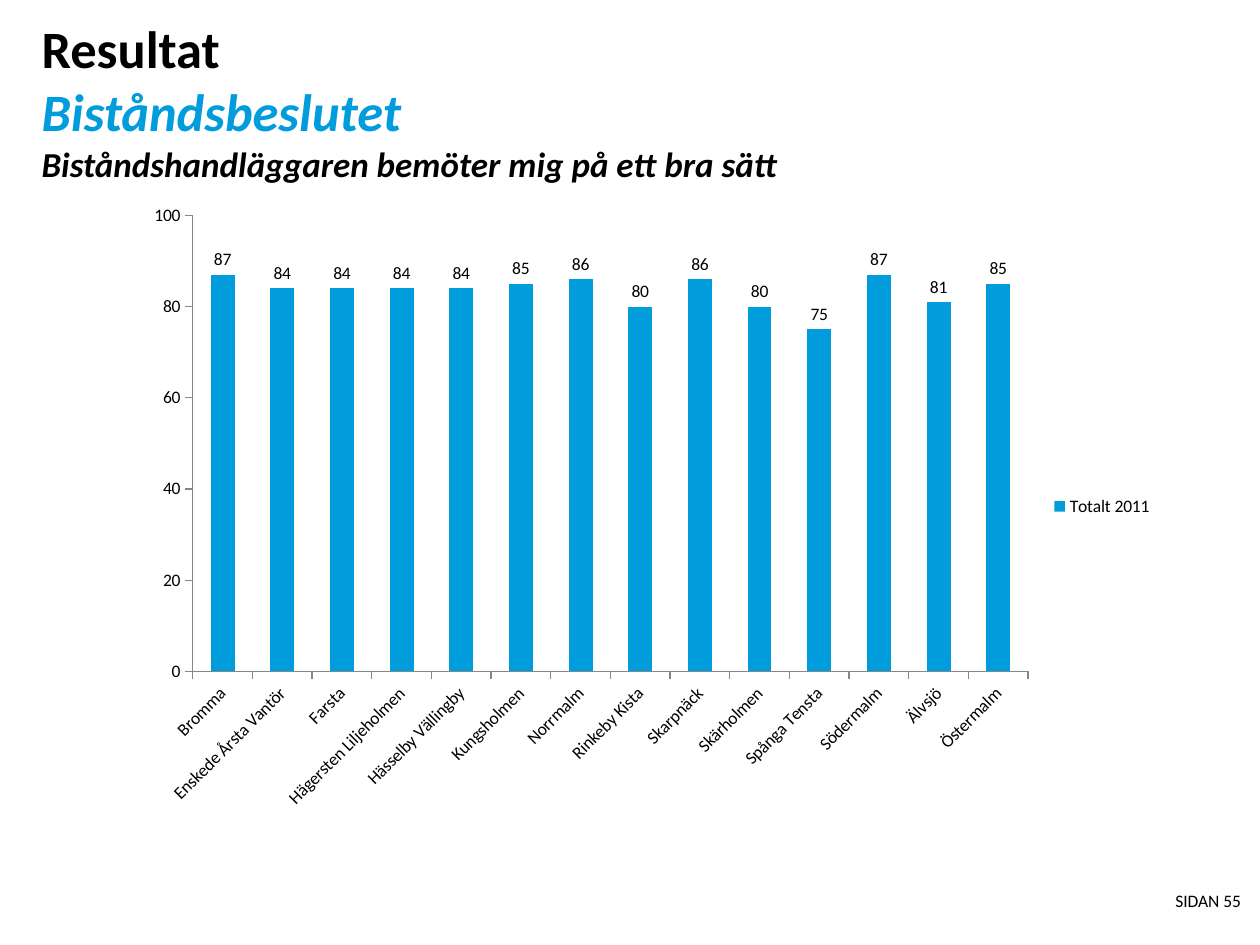
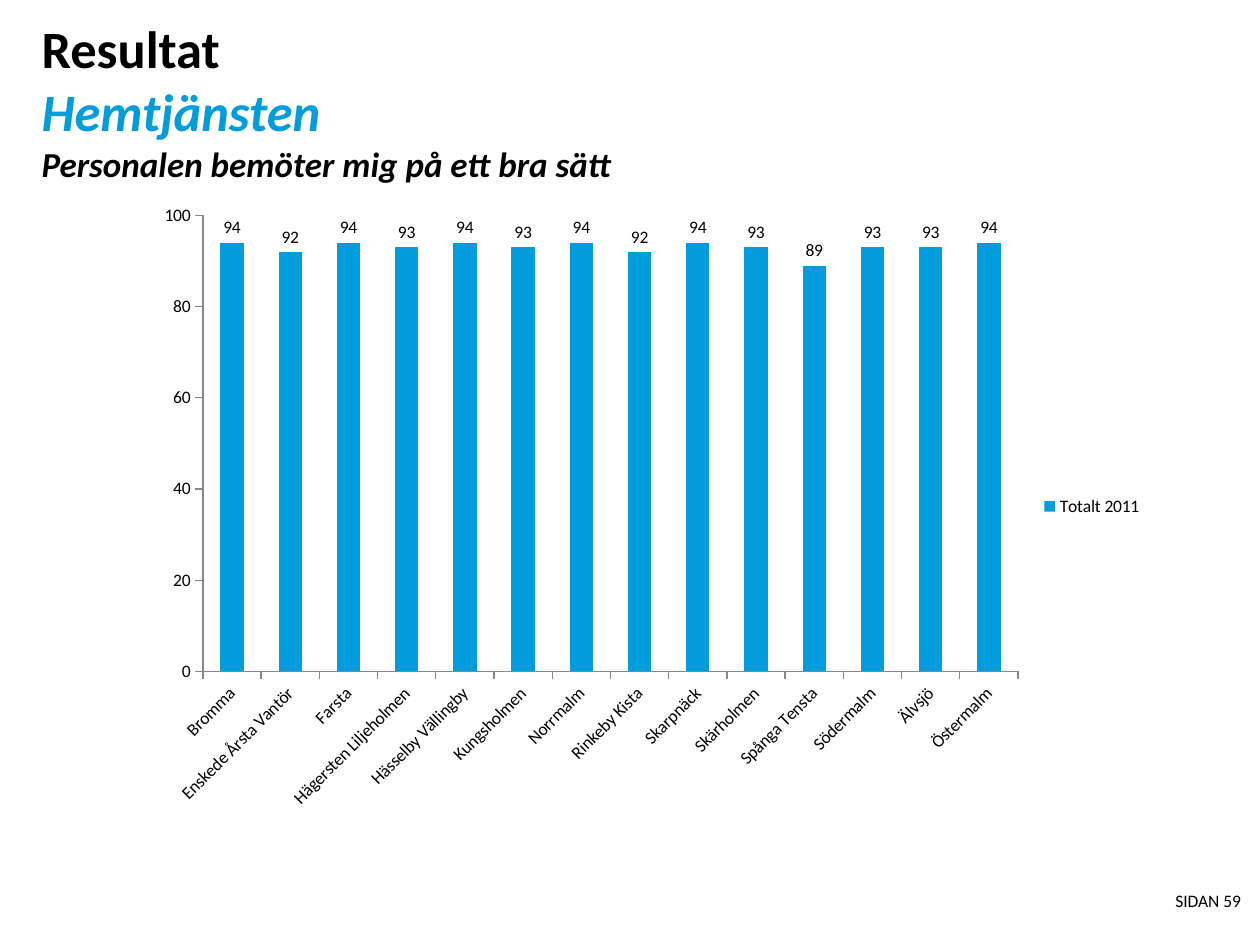
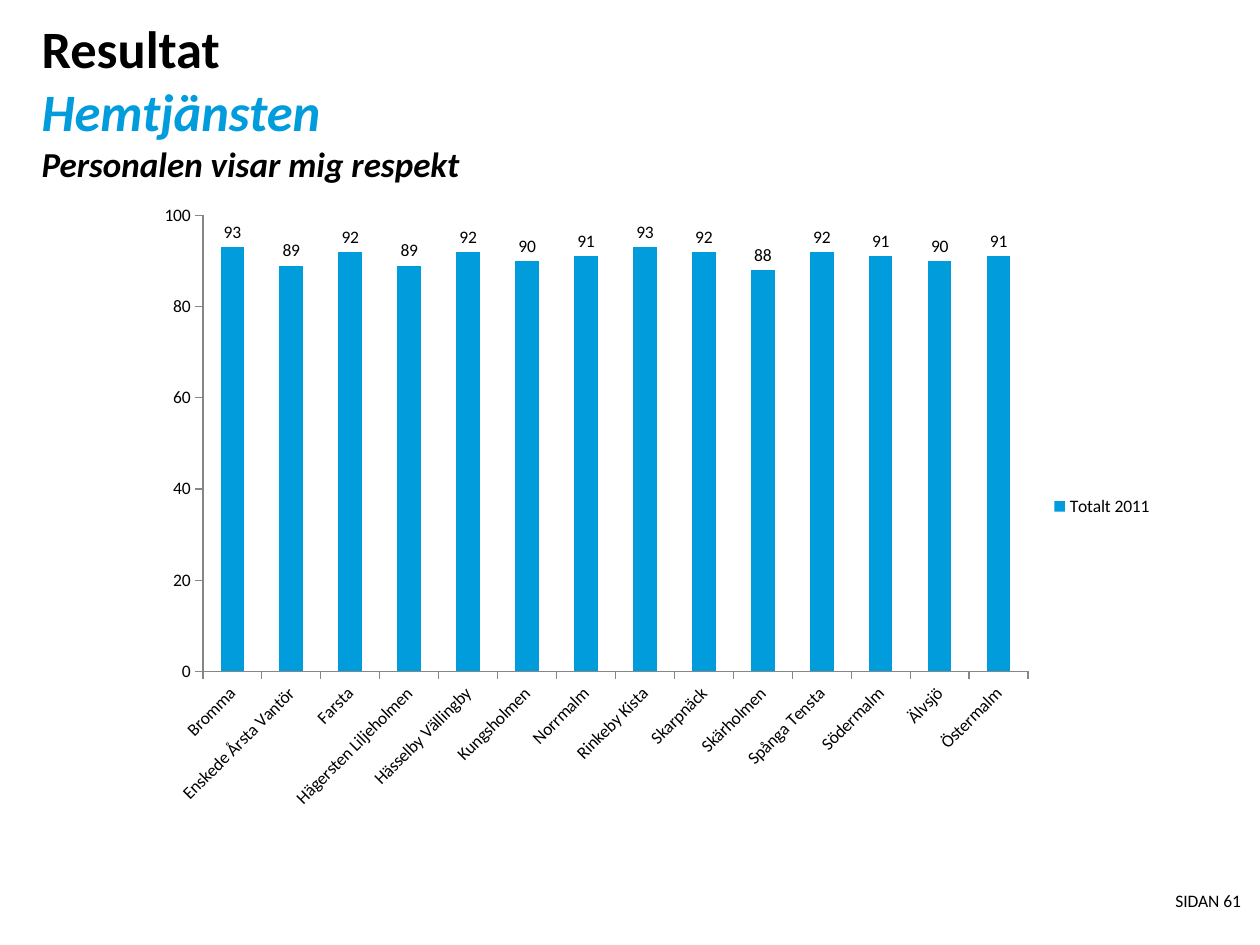
from lxml import etree
from pptx import Presentation
from pptx.chart.data import CategoryChartData
from pptx.dml.color import RGBColor
from pptx.enum.chart import XL_CHART_TYPE as ChartType
from pptx.enum.chart import XL_LABEL_POSITION as LabelPosition
from pptx.enum.chart import XL_LEGEND_POSITION as LegendPosition
from pptx.enum.chart import XL_TICK_MARK as TickMark
from pptx.enum.text import PP_ALIGN as Align
from pptx.oxml.ns import qn
from pptx.util import Inches, Pt

FONT = "Calibri"
COLORS = {"text": "000000", "accent": "009CDC", "axis": "868686"}
SLIDE_WIDTH, SLIDE_HEIGHT = 10, 7.5

HEADING = "Resultat"
SERIES = "Totalt 2011"
DISTRICTS = [
    "Bromma", "Enskede Årsta Vantör", "Farsta", "Hägersten Liljeholmen",
    "Hässelby Vällingby", "Kungsholmen", "Norrmalm", "Rinkeby Kista",
    "Skarpnäck", "Skärholmen", "Spånga Tensta", "Södermalm", "Älvsjö",
    "Östermalm",
]
SLIDES = [
    {"area": "Biståndsbeslutet", "page": 55,
     "question": "Biståndshandläggaren bemöter mig på ett bra sätt",
     "chart_left": 1.06, "chart_right": 9.25,
     "values": [87, 84, 84, 84, 84, 85, 86, 80, 86, 80, 75, 87, 81, 85]},
    {"area": "Hemtjänsten", "page": 59,
     "question": "Personalen bemöter mig på ett bra sätt",
     "chart_left": 1.14, "chart_right": 9.17,
     "values": [94, 92, 94, 93, 94, 93, 94, 92, 94, 93, 89, 93, 93, 94]},
    {"area": "Hemtjänsten", "page": 61,
     "question": "Personalen visar mig respekt",
     "chart_left": 1.14, "chart_right": 9.25,
     "values": [93, 89, 92, 89, 92, 90, 91, 93, 92, 88, 92, 91, 90, 91]},
]

TITLE_BOX = (0.33, 0.13, 9.25, 0.94)
FOOTER_BOX = (6.69, 7.06, 3.16, 0.22)
CHART_TOP, CHART_HEIGHT = 1.53, 4.98
# Space between the chart frame and the plot's axes, in inches
PLOT_MARGIN = {"left": 0.47, "right": 1.09, "top": 0.18, "bottom": 1.18}


def format_font(font, size, color="text", bold=False, italic=False):
    font.name = FONT
    font.size = Pt(size)
    font.bold = bold
    font.italic = italic
    font.color.rgb = RGBColor.from_string(COLORS[color])


def add_box(slide, box):
    frame = slide.shapes.add_textbox(*map(Inches, box)).text_frame
    frame.word_wrap = True
    frame.margin_left = frame.margin_right = 0
    frame.margin_top = frame.margin_bottom = 0
    return frame


def add_text(paragraph, text, align=Align.LEFT, **style):
    paragraph.alignment = align
    run = paragraph.add_run()
    run.text = text
    format_font(run.font, **style)


def add_title(slide, area, question):
    paragraph = add_box(slide, TITLE_BOX).paragraphs[0]
    add_text(paragraph, HEADING, size=30, bold=True)
    paragraph.add_line_break()
    add_text(paragraph, area, size=30, color="accent", bold=True, italic=True)
    paragraph.add_line_break()
    add_text(paragraph, question, size=20, bold=True, italic=True)


def add_footer(slide, page):
    paragraph = add_box(slide, FOOTER_BOX).paragraphs[0]
    add_text(paragraph, f"SIDAN {page}", align=Align.RIGHT, size=10)


def place_plot(chart, width, height):
    """Fix the inner plot area at the shared margins."""
    plot_area = chart.plots[0]._element.getparent()
    layout = plot_area.find(qn("c:layout"))
    if layout is None:
        layout = etree.Element(qn("c:layout"))
        plot_area.insert(0, layout)
    manual = etree.SubElement(layout, qn("c:manualLayout"))
    margin = PLOT_MARGIN
    settings = {
        "layoutTarget": "inner", "xMode": "edge", "yMode": "edge",
        "x": margin["left"] / width,
        "y": margin["top"] / height,
        "w": 1 - (margin["left"] + margin["right"]) / width,
        "h": 1 - (margin["top"] + margin["bottom"]) / height,
    }
    for name, value in settings.items():
        etree.SubElement(manual, qn(f"c:{name}")).set("val", str(value))


def format_axes(chart):
    for axis in (chart.category_axis, chart.value_axis):
        axis.has_major_gridlines = False
        axis.major_tick_mark = TickMark.OUTSIDE
        axis.minor_tick_mark = TickMark.NONE
        axis.format.line.color.rgb = RGBColor.from_string(COLORS["axis"])
        axis.format.line.width = Pt(0.75)
        format_font(axis.tick_labels.font, size=10)
    chart.value_axis.minimum_scale = 0
    chart.value_axis.maximum_scale = 100
    chart.value_axis.major_unit = 20
    label_text = chart.category_axis._element.find(qn("c:txPr"))
    label_text.find(qn("a:bodyPr")).set("rot", str(-45 * 60000))


def add_district_chart(slide, left, right, values):
    data = CategoryChartData()
    data.categories = DISTRICTS
    data.add_series(SERIES, values)
    width = right - left
    box = map(Inches, (left, CHART_TOP, width, CHART_HEIGHT))
    chart = slide.shapes.add_chart(ChartType.COLUMN_CLUSTERED, *box, data).chart
    chart.has_title = False
    format_font(chart.font, size=10)
    chart.has_legend = True
    chart.legend.position = LegendPosition.RIGHT
    chart.legend.include_in_layout = False
    format_font(chart.legend.font, size=10)

    plot = chart.plots[0]
    plot.gap_width = 150
    plot.vary_by_categories = False
    series = plot.series[0]
    series.format.fill.solid()
    series.format.fill.fore_color.rgb = RGBColor.from_string(COLORS["accent"])
    labels = series.data_labels
    labels.show_value = True
    labels.position = LabelPosition.OUTSIDE_END
    format_font(labels.font, size=10)
    format_axes(chart)
    place_plot(chart, width, CHART_HEIGHT)


def main():
    presentation = Presentation()
    presentation.slide_width = Inches(SLIDE_WIDTH)
    presentation.slide_height = Inches(SLIDE_HEIGHT)
    blank = presentation.slide_layouts[6]
    for content in SLIDES:
        slide = presentation.slides.add_slide(blank)
        add_title(slide, content["area"], content["question"])
        add_district_chart(slide, content["chart_left"],
                           content["chart_right"], content["values"])
        add_footer(slide, content["page"])
    presentation.save("out.pptx")


if __name__ == "__main__":
    main()
